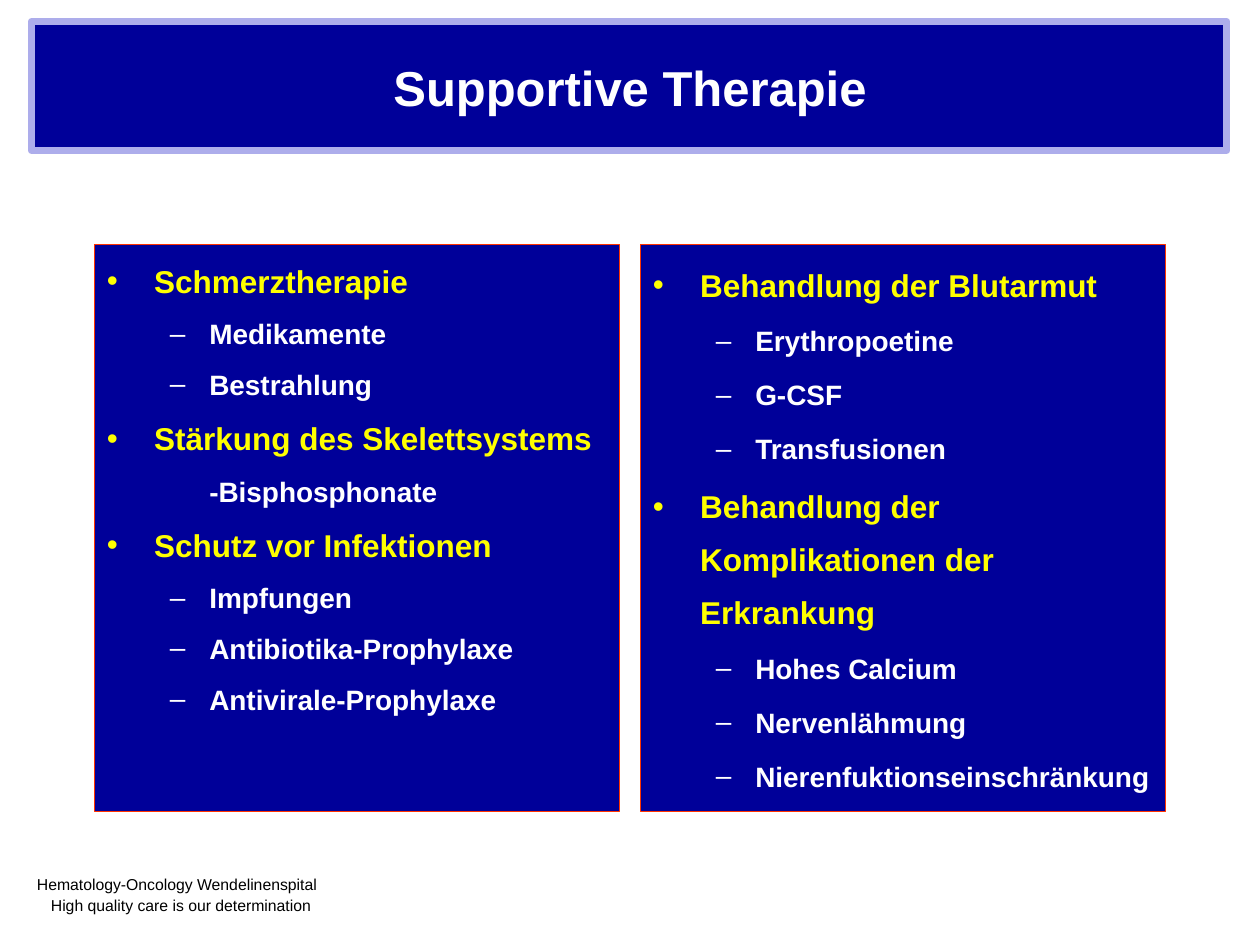
from pptx import Presentation
from pptx.dml.color import RGBColor
from pptx.enum.shapes import MSO_SHAPE
from pptx.enum.text import MSO_ANCHOR, PP_ALIGN
from pptx.oxml.ns import qn
from pptx.util import Pt
from lxml.etree import SubElement

HUES = {"navy": "000099", "lilac": "ADADEB", "red": "FF3300",
        "yellow": "FFFF00", "white": "FFFFFF", "black": "000000"}
LEFT = [(0, "•", "Schmerztherapie"), (1, "–", "Medikamente"), (1, "–", "Bestrahlung"),
        (0, "•", "Stärkung des Skelettsystems"), (1, "", "-Bisphosphonate"),
        (0, "•", "Schutz vor Infektionen"), (1, "–", "Impfungen"),
        (1, "–", "Antibiotika-Prophylaxe"), (1, "–", "Antivirale-Prophylaxe")]
RIGHT = [(0, "•", "Behandlung der Blutarmut"), (1, "–", "Erythropoetine"),
         (1, "–", "G-CSF"), (1, "–", "Transfusionen"),
         (0, "•", "Behandlung der Komplikationen der Erkrankung"),
         (1, "–", "Hohes Calcium"), (1, "–", "Nervenlähmung"),
         (1, "–", "Nierenfuktionseinschränkung")]
LEVELS = [(18, "yellow", 27, -27), (16, "white", 58.5, -22.5)]


def color(name):
    """Return the named colour."""
    return RGBColor.from_string(HUES[name])


def style(para, size, hue, bold=False):
    """Set the font of a paragraph."""
    font = para.font
    font.name, font.size, font.bold = "Arial", Pt(size), bold
    font.color.rgb = color(hue)


def add_box(slide, place, fill=None, line=None, width=0.75):
    """Add a rectangle with an optional fill and line."""
    box = slide.shapes.add_shape(MSO_SHAPE.RECTANGLE, *map(Pt, place))
    box.shadow.inherit = False
    if fill:
        box.fill.solid()
        box.fill.fore_color.rgb = color(fill)
    else:
        box.fill.background()
    if line:
        box.line.color.rgb = color(line)
        box.line.width = Pt(width)
        SubElement(box.line._get_or_add_ln(), qn("a:round"))
    else:
        box.line.fill.background()
    return box


def indent(para, left, first, mark):
    """Set the indents and bullet of a paragraph."""
    props = para._p.get_or_add_pPr()
    props.set("marL", str(Pt(left)))
    props.set("indent", str(Pt(first) if mark else 0))
    if mark:
        SubElement(props, qn("a:buFont")).set("typeface", "Arial")
        SubElement(props, qn("a:buChar")).set("char", mark)
    else:
        SubElement(props, qn("a:buNone"))


def add_list(slide, left, items, space):
    """Add a panel with a list of two levels."""
    frame = add_box(slide, (left, 139.7, 300, 324), "navy", "red").text_frame
    frame.word_wrap = True
    frame.vertical_anchor = MSO_ANCHOR.TOP
    for num, (level, mark, text) in enumerate(items):
        para = frame.add_paragraph() if num else frame.paragraphs[0]
        size, hue, edge, first = LEVELS[level]
        para.text, para.level = text, level
        para.alignment = PP_ALIGN.LEFT
        para.line_spacing, para.space_before = space, Pt(4)
        style(para, size, hue, True)
        indent(para, edge, first, mark)


def add_title(slide, text):
    """Add the title bar."""
    frame = add_box(slide, (20, 14.4, 680, 70.6), "navy").text_frame
    frame.word_wrap = True
    frame.vertical_anchor = MSO_ANCHOR.MIDDLE
    para = frame.paragraphs[0]
    para.text, para.alignment = text, PP_ALIGN.CENTER
    style(para, 28, "white", True)


def add_footer(slide, lines):
    """Add the footer lines, each with its own indent."""
    frame = slide.shapes.add_textbox(Pt(0), Pt(491), Pt(215), Pt(37.5)).text_frame
    frame.word_wrap = True
    frame.margin_top = Pt(9)
    for num, (edge, text) in enumerate(lines):
        para = frame.add_paragraph() if num else frame.paragraphs[0]
        para.text = text
        para.space_before = Pt(num)
        style(para, 9, "black")
        indent(para, edge, 0, "")


def main():
    """Build and save the slide."""
    deck = Presentation()
    deck.slide_width, deck.slide_height = Pt(720), Pt(540)
    slide = deck.slides.add_slide(deck.slide_layouts[6])
    add_footer(slide, [(14, "Hematology-Oncology Wendelinenspital"),
                       (22, "High quality care is our determination")])
    add_title(slide, "Supportive Therapie")
    add_list(slide, 54, LEFT, 1.3)
    add_list(slide, 366, RIGHT, 1.4)
    add_box(slide, (18, 12.4, 683, 73.6), line="lilac", width=4.25)
    deck.save("out.pptx")


if __name__ == "__main__":
    main()
